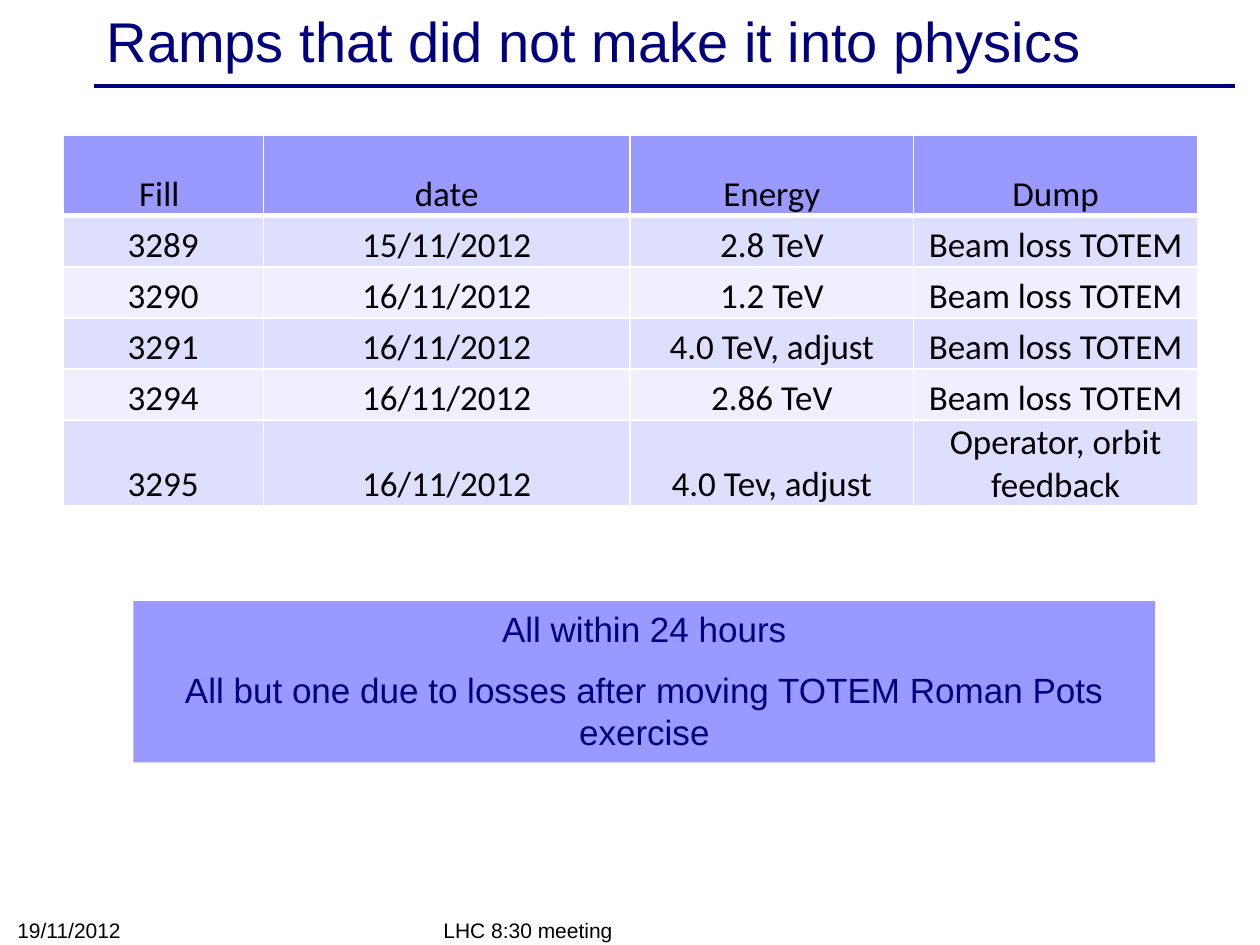
from dataclasses import dataclass
from lxml.etree import SubElement as Sub
from pptx import Presentation
from pptx.dml.color import RGBColor as RGB
from pptx.enum.shapes import MSO_CONNECTOR as Link, MSO_SHAPE as Form
from pptx.enum.text import MSO_ANCHOR as Anchor, PP_ALIGN as Align
from pptx.oxml.ns import qn
from pptx.util import Cm, Pt


@dataclass(frozen=True)
class Theme:
    navy: str = "00007D"
    black: str = "000000"
    white: str = "FFFFFF"
    head: str = "9999FF"
    bands: tuple = ("DEDEFF", "EFEFFF")
    sans: str = "Arial"
    grid: str = "Calibri"
    title: int = 32
    body: int = 20
    small: int = 12
    gap: int = 11


def place(*nums):
    return [Cm(n) for n in nums]


def paint(fill, color):
    fill.solid()
    fill.fore_color.rgb = RGB.from_string(color)


class Page:
    def __init__(self, slide, theme):
        self.shapes = slide.shapes
        self.theme = theme

    def prose(self, frame, lines, size, color, face, align=Align.LEFT):
        """Fill a text frame with one paragraph per line."""
        frame.word_wrap = True
        for i, line in enumerate(lines):
            para = frame.add_paragraph() if i else frame.paragraphs[0]
            para.text = line
            para.alignment = align
            if i:
                para.space_before = Pt(self.theme.gap)
            form = {"name": face, "size": Pt(size), "bold": False}
            for key, value in form.items():
                setattr(para.font, key, value)
            para.font.color.rgb = RGB.from_string(color)

    def label(self, box, text, size, color, anchor):
        frame = self.shapes.add_textbox(*place(*box)).text_frame
        frame.vertical_anchor = anchor
        self.prose(frame, [text], size, color, self.theme.sans)

    def rule(self, start, end, width):
        line = self.shapes.add_connector(
            Link.STRAIGHT, *place(*start, *end))
        line.line.width = Pt(width)
        line.line.color.rgb = RGB.from_string(self.theme.navy)
        Sub(line._element.spPr, qn("a:effectLst"))

    def panel(self, box, lines):
        shape = self.shapes.add_shape(Form.RECTANGLE, *place(*box))
        shape.shadow.inherit = False
        paint(shape.fill, self.theme.head)
        shape.line.fill.background()
        shape.text_frame.vertical_anchor = Anchor.TOP
        self.prose(shape.text_frame, lines, self.theme.body,
                   self.theme.navy, self.theme.sans, Align.CENTER)

    def edge(self, cell, side, width):
        line = Sub(cell._tc.get_or_add_tcPr(), qn(f"a:ln{side}"),
                   w=str(Pt(width)))
        fill = Sub(line, qn("a:solidFill"))
        Sub(fill, qn("a:srgbClr"), val=self.theme.white)

    def cell(self, cell, text, row):
        theme = self.theme
        form = {"vertical_anchor": Anchor.BOTTOM, "margin_left": Cm(0.03),
                "margin_right": Cm(0.03), "margin_top": Cm(0.03),
                "margin_bottom": 0}
        for key, value in form.items():
            setattr(cell, key, value)
        # The rule under the header is shared with the row below it.
        thick = {0: "B", 1: "T"}.get(row)
        for side in "LRTB":
            self.edge(cell, side, 3 if side == thick else 1)
        paint(cell.fill, theme.bands[(row - 1) % 2] if row else theme.head)
        self.prose(cell.text_frame, [text], theme.body, theme.black,
                   theme.grid, Align.CENTER)

    def table(self, spot, widths, heights, rows):
        size = (sum(widths), sum(heights))
        table = self.shapes.add_table(
            len(rows), len(widths), *place(*spot, *size)).table
        for col, width in zip(table.columns, widths):
            col.width = Cm(width)
        for row, height in zip(table.rows, heights):
            row.height = Cm(height)
        for r, texts in enumerate(rows):
            for c, text in enumerate(texts):
                self.cell(table.cell(r, c), text, r)


def main():
    deck = Presentation()
    deck.slide_width, deck.slide_height = place(25.4, 19.05)
    theme = Theme()
    page = Page(deck.slides.add_slide(deck.slide_layouts[6]), theme)

    page.rule((1.9, 1.73), (24.9, 1.73), 2)
    page.label((1.9, 0.08, 22.86, 1.45),
               "Ramps that did not make it into physics",
               theme.title, theme.navy, Anchor.MIDDLE)

    loss = "Beam loss TOTEM"
    rows = [
        ("Fill ", "date", "Energy", "Dump"),
        ("3289", "15/11/2012", "2.8 TeV", loss),
        ("3290", "16/11/2012", "1.2 TeV", loss),
        ("3291", "16/11/2012", "4.0 TeV, adjust", loss),
        ("3294", "16/11/2012", "2.86 TeV", loss),
        ("3295", "16/11/2012", "4.0 Tev, adjust",
         "Operator, orbit feedback"),
    ]
    heights = [1.63] + [1.03] * (len(rows) - 1)
    page.table((1.27, 2.72), (4.04, 7.39, 5.72, 5.72), heights, rows)

    page.panel((2.69, 12.12, 20.6, 3.25), [
        "All within 24 hours",
        "All but one due to losses after moving TOTEM Roman Pots exercise",
    ])

    foot = {"LHC 8:30 meeting": (8.69, 18.4, 8.05, 0.72),
            "19/11/2012": (0.1, 18.4, 5.92, 0.72)}
    for text, box in foot.items():
        page.label(box, text, theme.small, theme.black, Anchor.BOTTOM)

    deck.save("out.pptx")


if __name__ == "__main__":
    main()
